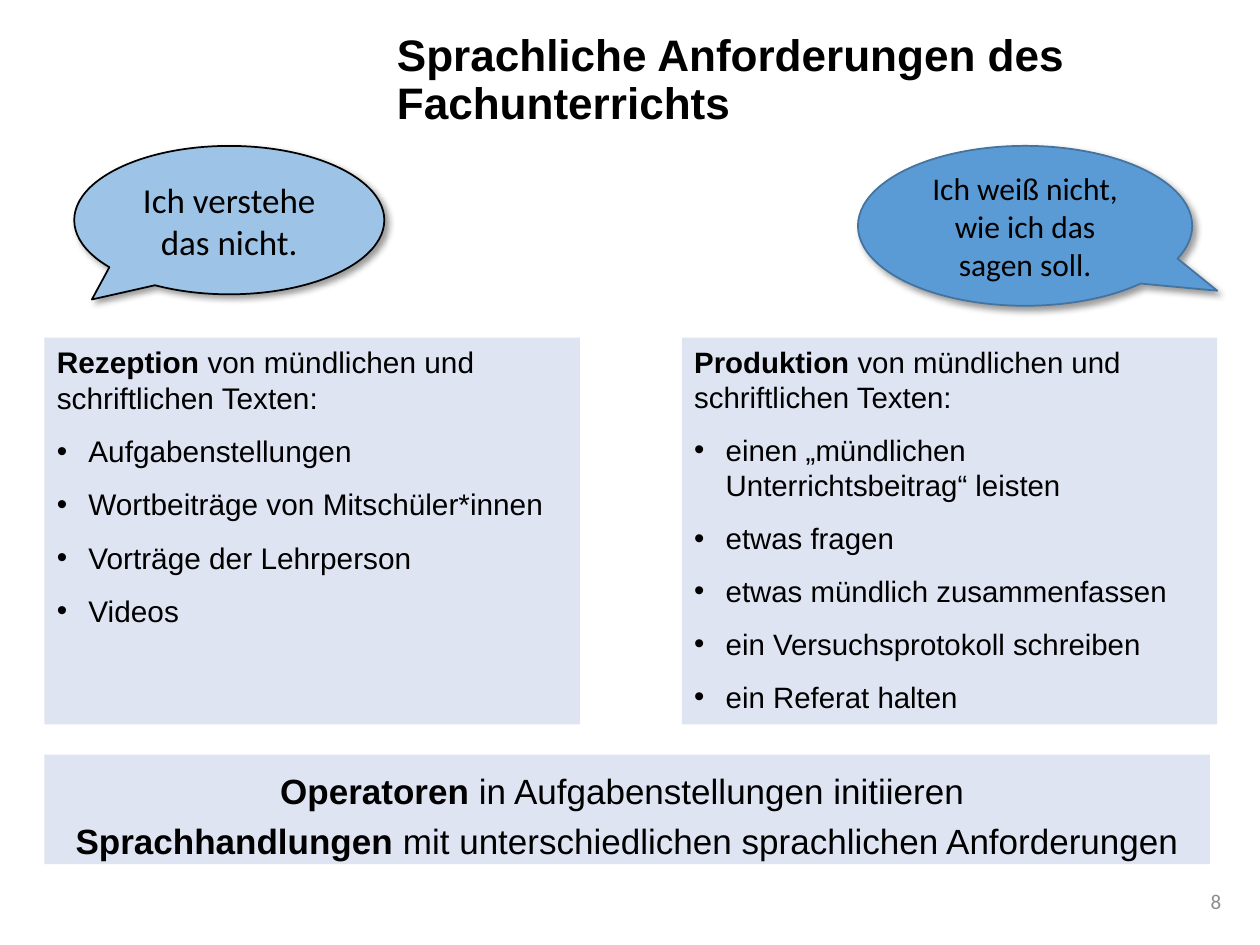
from lxml import etree
from pptx import Presentation
from pptx.dml.color import RGBColor
from pptx.enum.shapes import MSO_SHAPE as Shape
from pptx.enum.text import MSO_ANCHOR as Anchor, PP_ALIGN as Align
from pptx.oxml.ns import qn
from pptx.util import Pt

BLACK = RGBColor(0x00, 0x00, 0x00)
GREY = RGBColor(0x8C, 0x8C, 0x8C)
PANEL = RGBColor(0xDF, 0xE4, 0xF2)
LIGHT_BLUE = RGBColor(0x9D, 0xC3, 0xE6)
BLUE = RGBColor(0x5B, 0x9B, 0xD5)
DARK_BLUE = RGBColor(0x43, 0x73, 0x9E)


def add_span(para, text, size, font="Arial", bold=False, color=BLACK):
    span = para.add_run()
    span.text = text
    span.font.name = font
    span.font.size = Pt(size)
    span.font.bold = bold
    span.font.color.rgb = color


def add_paragraph(frame, first):
    return frame.paragraphs[0] if first else frame.add_paragraph()


def set_bullet(para, indent):
    props = para._p.get_or_add_pPr()
    props.set("marL", str(Pt(indent)))
    props.set("indent", str(-Pt(indent)))
    etree.SubElement(props, qn("a:buFont"), typeface="Arial")
    etree.SubElement(props, qn("a:buChar"), char="•")


def set_shadow(shape):
    shape.shadow.inherit = False
    effects = shape._element.spPr.find(qn("a:effectLst"))
    shadow = etree.SubElement(
        effects, qn("a:outerShdw"), blurRad=str(Pt(4)), dist=str(Pt(3)),
        dir=str(45 * 60000), algn="tl", rotWithShape="0")
    color = etree.SubElement(shadow, qn("a:srgbClr"), val=str(BLACK))
    etree.SubElement(color, qn("a:alpha"), val="40000")


def add_title(page, box, text):
    title = page.shapes.title
    title.left, title.top, title.width, title.height = map(Pt, box)
    frame = title.text_frame
    frame.word_wrap = True
    frame.vertical_anchor = Anchor.MIDDLE
    para = frame.paragraphs[0]
    para.alignment = Align.LEFT
    para.line_spacing = 0.9
    add_span(para, text, 25.2, bold=True)


def add_callout(page, box, tip, text, size, fill, line):
    callout = page.shapes.add_shape(Shape.OVAL_CALLOUT, *map(Pt, box))
    callout.adjustments[0], callout.adjustments[1] = tip
    callout.fill.solid()
    callout.fill.fore_color.rgb = fill
    callout.line.color.rgb = line
    callout.line.width = Pt(1)
    set_shadow(callout)
    frame = callout.text_frame
    frame.word_wrap = True
    frame.vertical_anchor = Anchor.MIDDLE
    para = frame.paragraphs[0]
    para.alignment = Align.CENTER
    add_span(para, text, size, font="Calibri")


def add_panel(page, box):
    panel = page.shapes.add_shape(Shape.RECTANGLE, *map(Pt, box))
    panel.fill.solid()
    panel.fill.fore_color.rgb = PANEL
    panel.line.fill.background()
    panel.shadow.inherit = False
    frame = panel.text_frame
    frame.word_wrap = True
    frame.vertical_anchor = Anchor.TOP
    return frame


def add_skill_panel(page, box, skill, items, size):
    frame = add_panel(page, box)
    intro = frame.paragraphs[0]
    intro.alignment = Align.LEFT
    add_span(intro, skill, size, bold=True)
    add_span(intro, " von mündlichen und schriftlichen Texten:", size)
    for item in items:
        para = frame.add_paragraph()
        para.alignment = Align.LEFT
        para.space_before = Pt(10)
        set_bullet(para, 18)
        add_span(para, item, size)


def add_summary(page, box, lines):
    frame = add_panel(page, box)
    for index, (term, rest) in enumerate(lines):
        para = add_paragraph(frame, index == 0)
        para.alignment = Align.CENTER
        para.line_spacing = 1.2
        add_span(para, term, 20, bold=True)
        add_span(para, rest, 20)


def add_page_number(page, box, number):
    frame = page.shapes.add_textbox(*map(Pt, box)).text_frame
    frame.word_wrap = True
    frame.vertical_anchor = Anchor.MIDDLE
    para = frame.paragraphs[0]
    para.alignment = Align.RIGHT
    add_span(para, number, 12, font="Calibri", color=GREY)


def main():
    deck = Presentation()
    deck.slide_width, deck.slide_height = Pt(720), Pt(540)
    page = deck.slides.add_slide(deck.slide_layouts[5])

    add_title(page, (219.6, 15.1, 471.6, 62.6),
              "Sprachliche Anforderungen des Fachunterrichts")

    # Reception and production side by side
    left, top, width, height = 25.4, 193, 306, 221
    add_skill_panel(page, (left, top, width, height), "Rezeption", [
        "Aufgabenstellungen",
        "Wortbeiträge von Mitschüler*innen",
        "Vorträge der Lehrperson",
        "Videos",
    ], 17)
    add_skill_panel(page, (389.6, top, width, height), "Produktion", [
        "einen „mündlichen Unterrichtsbeitrag“ leisten",
        "etwas fragen",
        "etwas mündlich zusammenfassen",
        "ein Versuchsprotokoll schreiben",
        "ein Referat halten",
    ], 16.8)
    add_page_number(page, (543, 500.4, 162, 28.8), "8")

    # Speech bubbles above the panels
    add_callout(page, (42.4, 83.4, 177.2, 84.8), (-0.443, 0.535),
                "Ich verstehe das nicht.", 20, LIGHT_BLUE, BLACK)
    add_callout(page, (490.3, 83.4, 191, 91.4), (0.575, 0.406),
                "Ich weiß nicht, wie ich das sagen soll.", 18, BLUE, DARK_BLUE)

    # Conclusion
    add_summary(page, (left, 431.3, 666, 62.6), [
        ("Operatoren", " in Aufgabenstellungen initiieren "),
        ("Sprachhandlungen",
         " mit unterschiedlichen sprachlichen Anforderungen"),
    ])

    deck.save("out.pptx")


if __name__ == "__main__":
    main()
